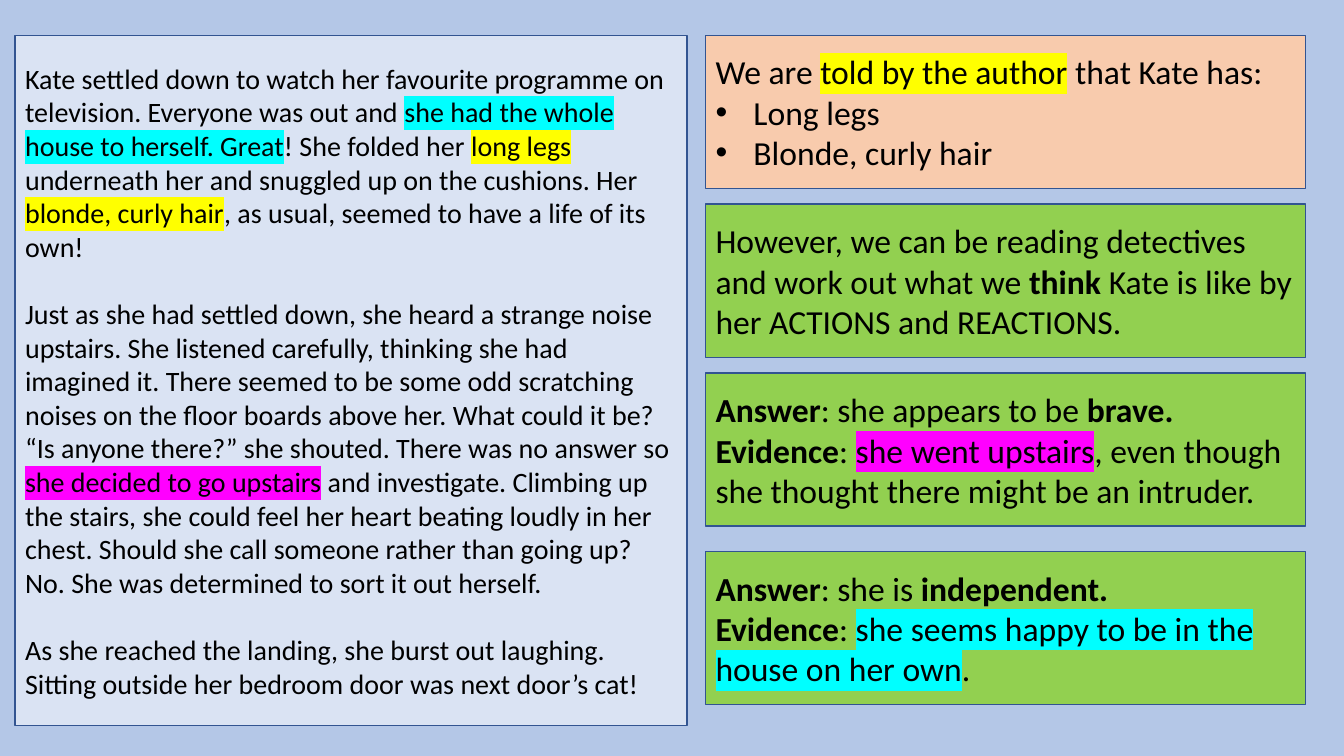
"""Build a reading slide that pairs a marked story with clues about Kate."""
import dataclasses

import lxml.etree
import pptx
import pptx.dml.color
import pptx.enum.shapes
import pptx.enum.text
import pptx.oxml.ns
import pptx.shapes.autoshape
import pptx.text.text
import pptx.util

Pt = pptx.util.Pt


@dataclasses.dataclass(frozen=True)
class Theme:
    """Hold the colours and type of the slide."""
    font: str = "Calibri"
    ink: str = "000000"
    edge: str = "325491"
    page: str = "B4C7E7"
    story: str = "DAE3F3"
    told: str = "F8CBAD"
    clue: str = "92D050"
    yellow: str = "FFFF00"
    cyan: str = "00FFFF"
    pink: str = "FF00FF"
    small: float = 20
    large: float = 24


THEME = Theme()


@dataclasses.dataclass(frozen=True)
class Run:
    """Describe a stretch of text in one format."""
    text: str
    bold: bool = False
    mark: str = ""


@dataclasses.dataclass(frozen=True)
class Para:
    """Describe a paragraph, its bullet and the gap above it."""
    runs: list[Run]
    dot: bool = False
    gap: float = 0


@dataclasses.dataclass(frozen=True)
class Panel:
    """Describe a framed box of text, in points."""
    left: float
    top: float
    width: float
    height: float
    fill: str
    size: float
    paras: list[Para]
    holder: bool = False


def tint(code: str) -> pptx.dml.color.RGBColor:
    """Turn a hex code into a colour."""
    return pptx.dml.color.RGBColor.from_string(code)


def write(para: pptx.text.text._Paragraph, text: str, *, size: float,
          bold: bool = False, mark: str = "") -> None:
    """Add formatted text to a paragraph."""
    run = para.add_run()
    run.text = text
    run.font.size = Pt(size)
    run.font.bold = bold
    run.font.color.rgb = tint(THEME.ink)
    if mark:
        tag = pptx.oxml.ns.qn("a:highlight")
        light = lxml.etree.SubElement(run.font._element, tag)
        lxml.etree.SubElement(light, pptx.oxml.ns.qn("a:srgbClr"), val=mark)
    run.font.name = THEME.font


def indent(para: pptx.text.text._Paragraph, dot: bool) -> None:
    """Set a bullet with a hanging indent, or none."""
    props = para._p.get_or_add_pPr()
    step = Pt(27) if dot else 0
    props.set("marL", str(step))
    props.set("indent", str(-step))
    if dot:
        lxml.etree.SubElement(props, pptx.oxml.ns.qn("a:buChar"), char="•")
    else:
        lxml.etree.SubElement(props, pptx.oxml.ns.qn("a:buNone"))


def draw(shape: pptx.shapes.autoshape.Shape, panel: Panel) -> None:
    """Place, paint and fill a shape as its panel says."""
    shape.left, shape.top = Pt(panel.left), Pt(panel.top)
    shape.width, shape.height = Pt(panel.width), Pt(panel.height)
    shape.shadow.inherit = False
    shape.fill.solid()
    shape.fill.fore_color.rgb = tint(panel.fill)
    shape.line.color.rgb = tint(THEME.edge)
    shape.line.width = Pt(1)
    frame = shape.text_frame
    frame.word_wrap = True
    frame.auto_size = pptx.enum.text.MSO_AUTO_SIZE.NONE
    frame.vertical_anchor = pptx.enum.text.MSO_ANCHOR.MIDDLE
    for index, item in enumerate(panel.paras):
        para = frame.add_paragraph() if index else frame.paragraphs[0]
        para.alignment = pptx.enum.text.PP_ALIGN.LEFT
        para.line_spacing = 1.0
        para.space_before = Pt(item.gap)
        para.space_after = Pt(0)
        indent(para, item.dot)
        for run in item.runs:
            write(para, run.text, size=panel.size, bold=run.bold, mark=run.mark)


def card(row: int, fill: str, paras: list[Para], *, drop: float = 0,
         holder: bool = False) -> Panel:
    """Describe a box in the right column."""
    return Panel(504, 25.2 + 120.6 * row + drop, 428.4, 109.4, fill,
                 THEME.large, paras, holder)


STORY = [
    Para([
        Run("Kate settled down to watch her favourite programme on television. Everyone was out and "),
        Run("she had the whole", mark=THEME.cyan),
        Run(" "),
        Run("house to herself. Great", mark=THEME.cyan),
        Run("! She folded her "),
        Run("long legs", mark=THEME.yellow),
        Run(" underneath her and snuggled up on the cushions. Her "),
        Run("blonde, curly hair", mark=THEME.yellow),
        Run(", as usual, seemed to have a life of its own!"),
    ]),
    Para([Run("Just as she had settled down, she heard a strange noise upstairs. She listened "
              "carefully, thinking she had imagined it. There seemed to be some odd scratching "
              "noises on the floor boards above her. What could it be?")], gap=24),
    Para([
        Run("“Is anyone there?” she shouted. There was no answer so "),
        Run("she decided to go upstairs", mark=THEME.pink),
        Run(" and investigate. Climbing up the stairs, she could feel her heart beating loudly "
            "in her chest. Should she call someone rather than going up? No. She was determined "
            "to sort it out herself."),
    ]),
    Para([Run("As she reached the landing, she burst out laughing. Sitting outside her bedroom "
              "door was next door’s cat!")], gap=24),
]

PANELS = [
    Panel(10.8, 25.2, 480, 493.2, THEME.story, THEME.small, STORY),
    card(0, THEME.told, [
        Para([Run("We are "), Run("told by the author", mark=THEME.yellow),
              Run(" that Kate has:")]),
        Para([Run("Long legs")], dot=True),
        Para([Run("Blonde, curly hair")], dot=True),
    ], holder=True),
    card(1, THEME.clue, [
        Para([Run("However, we can be reading detectives and work out what we "),
              Run("think", bold=True),
              Run(" Kate is like by her ACTIONS and REACTIONS.")]),
    ]),
    card(2, THEME.clue, [
        Para([Run("Answer", bold=True), Run(": she appears to be "), Run("brave.", bold=True)]),
        Para([Run("Evidence", bold=True), Run(": "),
              Run("she went upstairs", mark=THEME.pink),
              Run(", even though she thought there might be an intruder.")]),
    ]),
    card(3, THEME.clue, [
        Para([Run("Answer", bold=True), Run(": she is "), Run("independent.", bold=True)]),
        Para([Run("Evidence", bold=True), Run(": "),
              Run("she seems happy to be in the house on her own", mark=THEME.cyan),
              Run(".")]),
    ], drop=6.8),
]


def main() -> None:
    """Build the slide and save it."""
    deck = pptx.Presentation()
    deck.slide_width, deck.slide_height = Pt(960), Pt(540)
    slide = deck.slides.add_slide(deck.slide_layouts[1])
    slide.background.fill.solid()
    slide.background.fill.fore_color.rgb = tint(THEME.page)
    title = slide.shapes.title._element
    title.getparent().remove(title)
    for panel in PANELS:
        if panel.holder:
            shape = slide.placeholders[1]
        else:
            kind = pptx.enum.shapes.MSO_SHAPE.RECTANGLE
            shape = slide.shapes.add_shape(kind, 0, 0, 0, 0)
        draw(shape, panel)
    deck.save("out.pptx")


if __name__ == "__main__":
    main()
